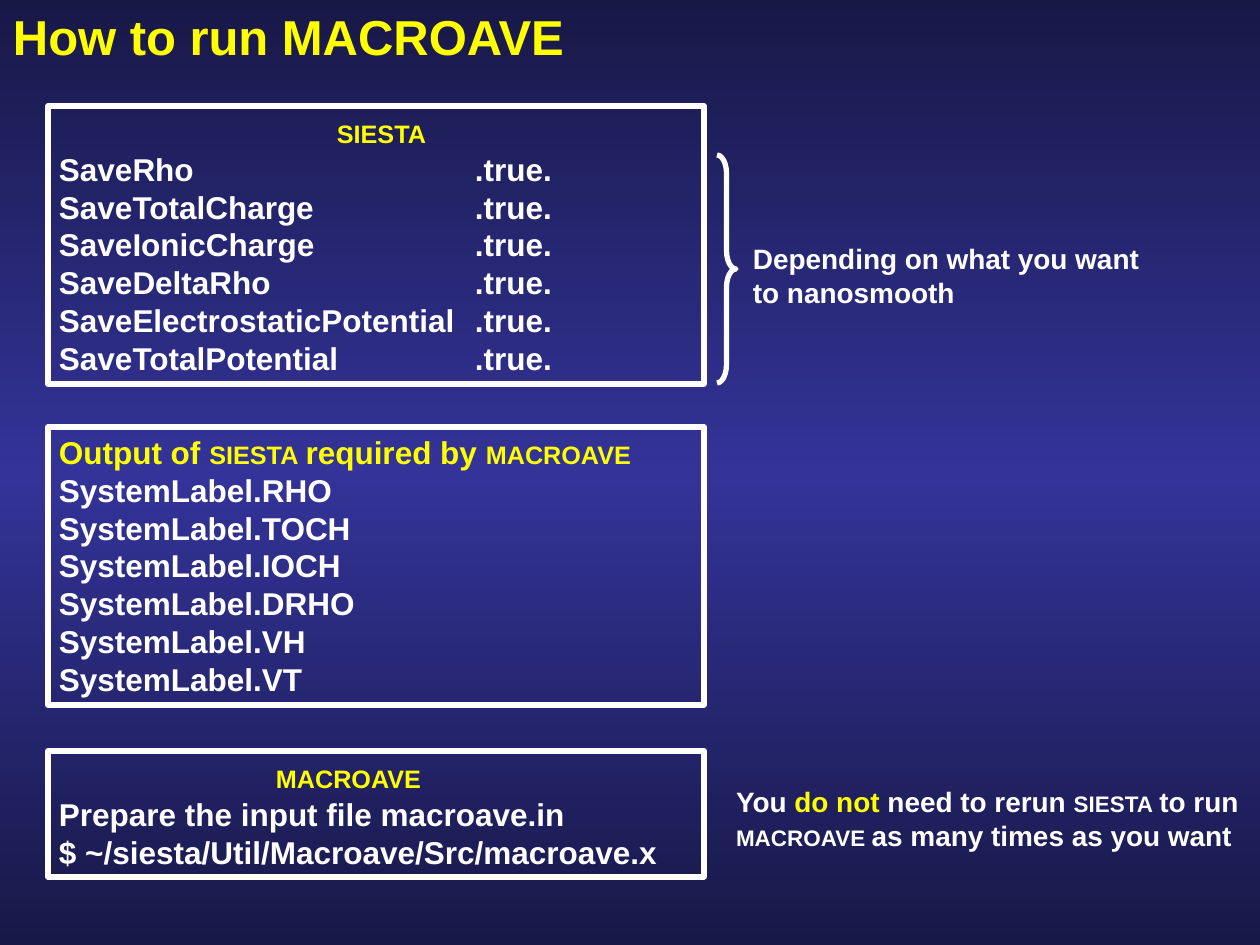
"""Build the slide on how to run MACROAVE."""
from dataclasses import dataclass
from typing import NamedTuple

from lxml import etree
from pptx import Presentation
from pptx.dml.color import RGBColor
from pptx.enum import shapes, text
from pptx.oxml.ns import qn
from pptx.util import Pt

PX = 914400 // 126
WHITE = RGBColor(0xFF, 0xFF, 0xFF)
YELLOW = RGBColor(0xFF, 0xFF, 0x00)
NAVY = RGBColor(0x18, 0x18, 0x47)
INDIGO = RGBColor(0x33, 0x33, 0x99)
FONT = "Arial"
CARD_LEFT, CARD_WIDTH = 48, 656
VALUE_TAB = 416


class Span(NamedTuple):
    text: str
    color: RGBColor = WHITE
    small_caps: bool = False


class Box(NamedTuple):
    left: int
    top: int
    width: int
    height: int

    def emu(self) -> list[int]:
        return [v * PX for v in self]


@dataclass
class Card:
    top: int
    height: int
    header: list[Span]
    lines: list[str]
    header_tab: int = VALUE_TAB


@dataclass
class Note:
    box: Box
    spans: list[Span]


CARDS = [
    Card(106, 278, [Span("\t", YELLOW), Span("siesta", YELLOW, True)],
         [f"{name}\t.true." for name in (
             "SaveRho", "SaveTotalCharge", "SaveIonicCharge", "SaveDeltaRho",
             "SaveElectrostaticPotential", "SaveTotalPotential")], 278),
    Card(427, 278, [Span("Output of ", YELLOW), Span("siesta ", YELLOW, True),
                    Span("required by ", YELLOW), Span("macroave", YELLOW, True)],
         [f"SystemLabel.{ext}" for ext in ("RHO", "TOCH", "IOCH", "DRHO", "VH", "VT")]),
    Card(751, 126, [Span("\t", YELLOW), Span("macroave", YELLOW, True)],
         ["Prepare the input file macroave.in",
          "$ ~/siesta/Util/Macroave/Src/macroave.x"], 217),
]
NOTES = [
    Note(Box(742, 236, 433, 79), [Span("Depending on what you want to nanosmooth")]),
    Note(Box(725, 779, 535, 79),
         [Span("You "), Span("do not", YELLOW), Span(" need to rerun "),
          Span("siesta ", small_caps=True), Span("to run "),
          Span("macroave ", small_caps=True), Span("as many times as you want")]),
]


def set_frame(tf, inset: int = 11) -> None:
    """Wrap the text, start it at the top and set the insets."""
    tf.word_wrap = True
    tf.vertical_anchor = text.MSO_ANCHOR.TOP
    tf.margin_left = tf.margin_right = inset * PX
    tf.margin_top = tf.margin_bottom = 6 * PX


def write(p, spans: list[Span], size: int) -> None:
    """Fill a left-aligned paragraph with bold spans."""
    p.alignment = text.PP_ALIGN.LEFT
    for span in spans:
        r = p.add_run()
        r.text = span.text
        r.font.name, r.font.size, r.font.bold = FONT, Pt(size), True
        r.font.color.rgb = span.color
        if span.small_caps:
            r.font._element.set("cap", "small")


def add_tab(p, position: int) -> None:
    """Give a paragraph one left tab stop."""
    tabs = etree.SubElement(p._p.get_or_add_pPr(), qn("a:tabLst"))
    etree.SubElement(tabs, qn("a:tab"), pos=str(position * PX), algn="l")


def add_outline(slide, kind, box: Box):
    """Add an unfilled shape with a white outline."""
    sp = slide.shapes.add_shape(kind, *box.emu())
    sp.shadow.inherit = False
    sp.fill.background()
    sp.line.color.rgb = WHITE
    sp.line.width = Pt(3)
    return sp


def add_card(slide, card: Card) -> None:
    """Draw a framed list under its yellow header."""
    box = Box(CARD_LEFT, card.top, CARD_WIDTH, card.height)
    tf = add_outline(slide, shapes.MSO_SHAPE.RECTANGLE, box).text_frame
    set_frame(tf)
    add_tab(tf.paragraphs[0], card.header_tab)
    write(tf.paragraphs[0], card.header, 18)
    for line in card.lines:
        p = tf.add_paragraph()
        add_tab(p, VALUE_TAB)
        write(p, [Span(line)], 18)


def add_note(slide, note: Note) -> None:
    """Place a remark beside the cards."""
    tf = slide.shapes.add_textbox(*note.box.emu()).text_frame
    set_frame(tf)
    write(tf.paragraphs[0], note.spans, 16)


def set_background(slide) -> None:
    """Paint a vertical gradient that is brightest in the middle."""
    fill = slide.background.fill
    fill.gradient()
    fill.gradient_angle = 270
    stops = fill._fill._gradFill.find(qn("a:gsLst"))
    for stop in list(stops):
        stops.remove(stop)
    for percent, color in ((0, NAVY), (50, INDIGO), (100, NAVY)):
        stop = etree.SubElement(stops, qn("a:gs"), pos=str(percent * 1000))
        etree.SubElement(stop, qn("a:srgbClr"), val=str(color))


def main() -> None:
    """Compose and save the slide."""
    prs = Presentation()
    prs.slide_width, prs.slide_height = 1260 * PX, 945 * PX
    slide = prs.slides.add_slide(prs.slide_layouts[5])
    set_background(slide)
    title = slide.shapes.title
    title.left, title.top, title.width, title.height = Box(0, 0, 796, 72).emu()
    set_frame(title.text_frame, 13)
    write(title.text_frame.paragraphs[0], [Span("How to run MACROAVE", YELLOW)], 28)
    for card in CARDS:
        add_card(slide, card)
    brace = add_outline(slide, shapes.MSO_SHAPE.RIGHT_BRACE, Box(717, 155, 19, 228))
    brace.adjustments[0] = 0.97
    for note in NOTES:
        add_note(slide, note)
    prs.save("out.pptx")


if __name__ == "__main__":
    main()
